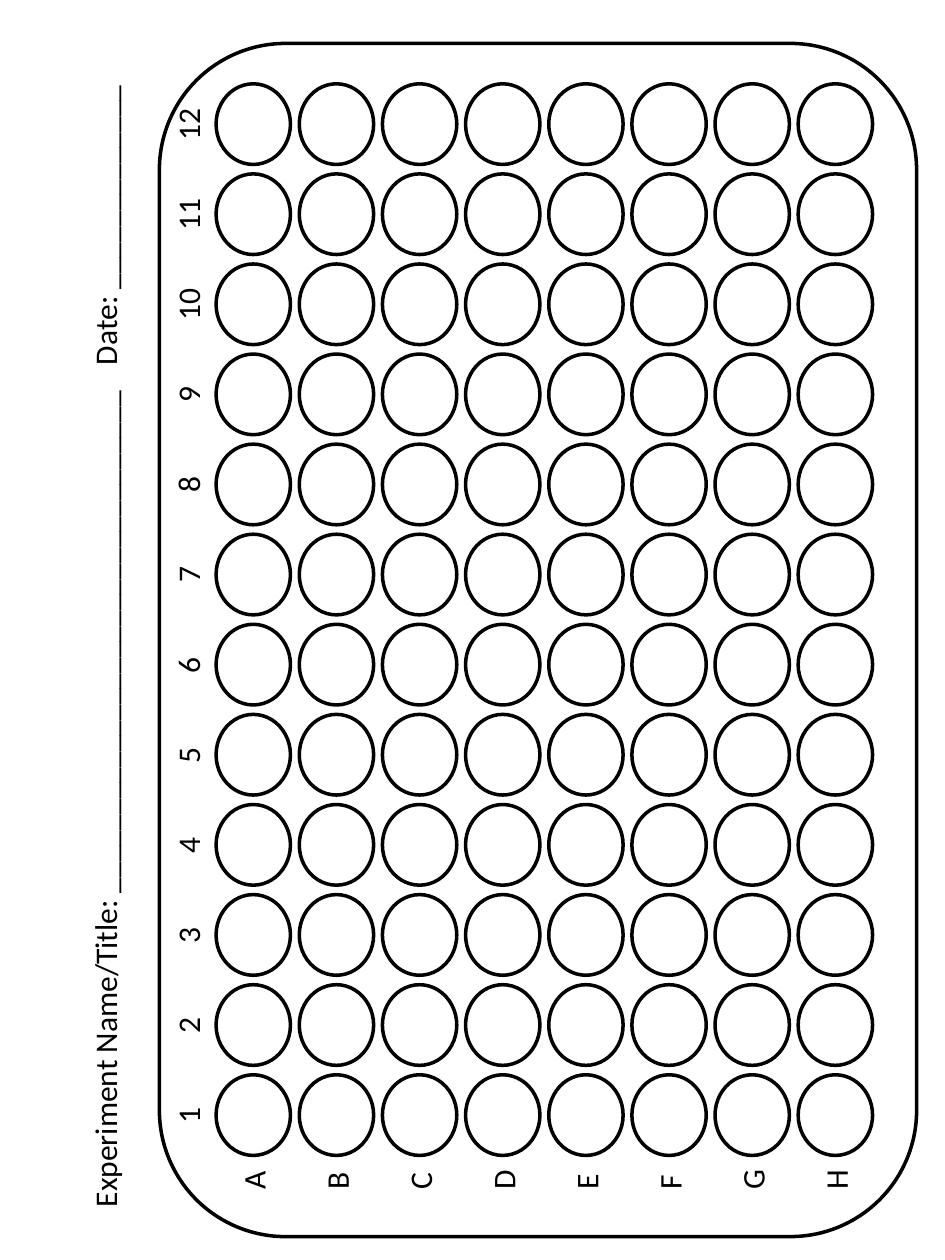
from dataclasses import dataclass

from pptx import Presentation
from pptx.dml.color import RGBColor
from pptx.enum.shapes import MSO_SHAPE
from pptx.enum.text import MSO_AUTO_SIZE
from pptx.util import Inches, Pt

INK = "000000"
ROWS = "ABCDEFGH"
COLUMNS = range(1, 13)
FIRST_X, ROW_PITCH = 2.01, 0.66
FIRST_Y, COLUMN_PITCH = 8.85, 0.715
NUMBER_X, LETTER_Y = 1.49, 9.36


@dataclass
class Label:
    text: str
    x: float
    y: float
    width: float
    height: float = 0.4


@dataclass
class Outline:
    kind: MSO_SHAPE
    x: float
    y: float
    width: float
    height: float
    rotation: float = 0


def color(value: str) -> RGBColor:
    return RGBColor.from_string(value)


def draw_outline(shapes, item: Outline) -> None:
    s = shapes.add_shape(
        item.kind,
        Inches(item.x - item.width / 2), Inches(item.y - item.height / 2),
        Inches(item.width), Inches(item.height),
    )
    s.rotation = item.rotation
    s.shadow.inherit = False
    s.fill.background()
    s.line.color.rgb = color(INK)
    s.line.width = Pt(2)


def draw_label(shapes, label: Label) -> None:
    tb = shapes.add_textbox(
        Inches(label.x - label.width / 2), Inches(label.y - label.height / 2),
        Inches(label.width), Inches(label.height),
    )
    tb.rotation = 270
    tf = tb.text_frame
    tf.word_wrap = False
    tf.auto_size = MSO_AUTO_SIZE.SHAPE_TO_FIT_TEXT
    p = tf.paragraphs[0]
    p.text = label.text
    p.font.name = "Calibri"
    p.font.size = Pt(18)
    p.font.color.rgb = color(INK)


def main() -> None:
    prs = Presentation()
    prs.slide_width, prs.slide_height = Inches(7.5), Inches(10)
    slide = prs.slides.add_slide(prs.slide_layouts[6])
    plate = slide.shapes.add_group_shape().shapes

    row_xs = [FIRST_X + i * ROW_PITCH for i in range(len(ROWS))]
    column_ys = [FIRST_Y - i * COLUMN_PITCH for i in range(len(COLUMNS))]

    for x in row_xs:
        for y in column_ys:
            draw_outline(plate, Outline(MSO_SHAPE.OVAL, x, y, 0.64, 0.59, 270))
    draw_outline(plate, Outline(MSO_SHAPE.ROUNDED_RECTANGLE, 4.27, 5.08, 6.01, 9.47))

    for number, y in zip(COLUMNS, column_ys):
        draw_label(plate, Label(str(number), NUMBER_X, y, 0.33 if number < 10 else 0.46))
    for letter, x in zip(ROWS, row_xs):
        draw_label(plate, Label(letter, x, LETTER_Y, 0.35))

    for label in (
        Label("Experiment Name/Title: " + "_" * 32, 0.83, 6.3, 6.76),
        Label("Date: " + "_" * 13, 0.83, 1.77, 2.45),
    ):
        draw_label(slide.shapes, label)

    prs.save("out.pptx")


if __name__ == "__main__":
    main()
